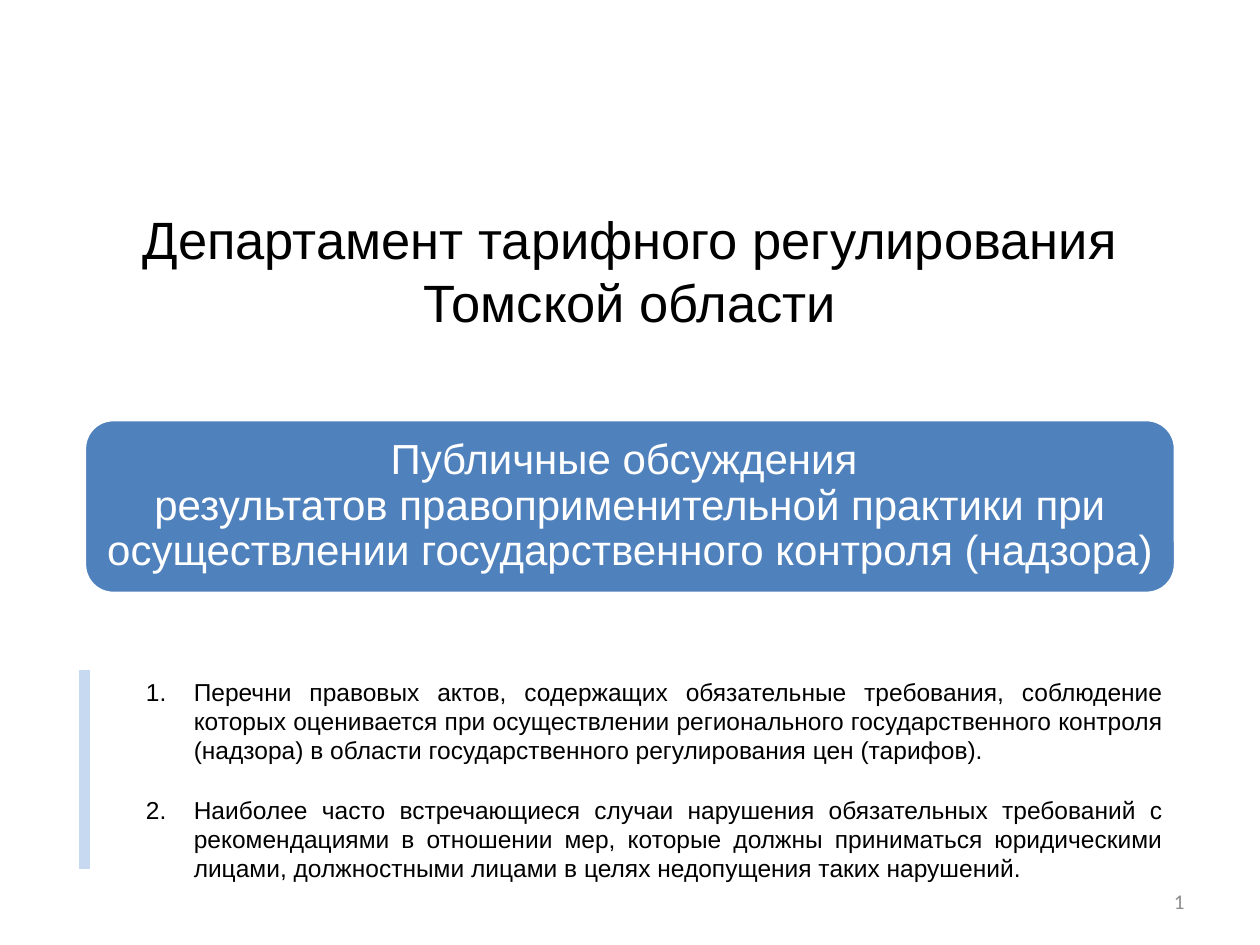
from dataclasses import dataclass

from lxml import etree
from pptx import Presentation
from pptx.dml.color import RGBColor
from pptx.enum.shapes import MSO_CONNECTOR, MSO_SHAPE
from pptx.enum.text import MSO_ANCHOR, PP_ALIGN
from pptx.oxml.ns import qn
from pptx.slide import Slide
from pptx.text.text import TextFrame, _Paragraph
from pptx.util import Inches, Pt

LEFT, CENTER, RIGHT, JUSTIFY = PP_ALIGN.LEFT, PP_ALIGN.CENTER, PP_ALIGN.RIGHT, PP_ALIGN.JUSTIFY
TOP, MIDDLE = MSO_ANCHOR.TOP, MSO_ANCHOR.MIDDLE


@dataclass(frozen=True)
class TextStyle:
    size: float
    color: RGBColor
    align: PP_ALIGN
    font: str = "Arial"


@dataclass(frozen=True)
class Theme:
    banner_fill = RGBColor(0x4F, 0x81, 0xBD)
    accent = RGBColor(0xC6, 0xD9, 0xF1)
    white = RGBColor(0xFF, 0xFF, 0xFF)
    black = RGBColor(0, 0, 0)
    title = TextStyle(30, black, CENTER)
    banner = TextStyle(24, white, CENTER)
    topic = TextStyle(14, black, JUSTIFY)
    page_number = TextStyle(12, RGBColor(0x8C, 0x8C, 0x8C), RIGHT, "Calibri")


@dataclass(frozen=True)
class Box:
    left: float
    top: float
    width: float
    height: float

    def emu(self) -> tuple:
        return tuple(Inches(v) for v in (self.left, self.top, self.width, self.height))


THEME = Theme()
TITLE = "Департамент тарифного регулирования Томской области"
BANNER_LINES = (
    "Публичные обсуждения ",
    "результатов правоприменительной практики при "
    "осуществлении государственного контроля (надзора)",
)
TOPICS = (
    "Перечни правовых актов, содержащих обязательные требования, соблюдение которых "
    "оценивается при осуществлении регионального государственного контроля (надзора) "
    "в области государственного регулирования цен (тарифов).",
    "Наиболее часто встречающиеся случаи нарушения обязательных требований с "
    "рекомендациями в отношении мер, которые должны приниматься юридическими лицами, "
    "должностными лицами в целях недопущения таких нарушений.",
)
TOPIC_INDENT = 0.38
TOPIC_GAP = 17


def add_styled_run(paragraph: _Paragraph, text: str, style: TextStyle) -> None:
    paragraph.alignment = style.align
    run = paragraph.add_run()
    run.text = text
    run.font.size = Pt(style.size)
    run.font.name = style.font
    run.font.color.rgb = style.color


def add_text_frame(slide: Slide, box: Box, anchor: MSO_ANCHOR) -> TextFrame:
    frame = slide.shapes.add_textbox(*box.emu()).text_frame
    frame.word_wrap = True
    frame.vertical_anchor = anchor
    return frame


def add_label(slide: Slide, box: Box, text: str, style: TextStyle) -> None:
    frame = add_text_frame(slide, box, MIDDLE)
    add_styled_run(frame.paragraphs[0], text, style)


def add_banner(slide: Slide, box: Box) -> None:
    banner = slide.shapes.add_shape(MSO_SHAPE.ROUNDED_RECTANGLE, *box.emu())
    banner.shadow.inherit = False
    banner.fill.solid()
    banner.fill.fore_color.rgb = THEME.banner_fill
    banner.line.color.rgb = THEME.white
    banner.line.width = Pt(2)
    frame = banner.text_frame
    frame.word_wrap = True
    frame.vertical_anchor = MIDDLE
    frame.margin_left = frame.margin_right = Inches(0.09)
    paragraph = frame.paragraphs[0]
    paragraph.line_spacing = 0.9
    for index, line in enumerate(BANNER_LINES):
        if index:
            paragraph.add_line_break()
        add_styled_run(paragraph, line, THEME.banner)


def add_accent_line(slide: Slide, left: float, top: float, bottom: float) -> None:
    accent = slide.shapes.add_connector(
        MSO_CONNECTOR.STRAIGHT, Inches(left), Inches(top), Inches(left), Inches(bottom))
    accent.line.color.rgb = THEME.accent
    accent.line.width = Pt(6)
    etree.SubElement(accent._element.spPr, qn("a:effectLst"))


def number_paragraph(paragraph: _Paragraph) -> None:
    properties = paragraph._p.get_or_add_pPr()
    properties.set("marL", str(Inches(TOPIC_INDENT)))
    properties.set("indent", str(-Inches(TOPIC_INDENT)))
    etree.SubElement(properties, qn("a:buAutoNum"), type="arabicPeriod")


def add_topics(slide: Slide, box: Box) -> None:
    frame = add_text_frame(slide, box, TOP)
    for index, topic in enumerate(TOPICS):
        paragraph = frame.add_paragraph() if index else frame.paragraphs[0]
        if index:
            paragraph.space_before = Pt(TOPIC_GAP)
        number_paragraph(paragraph)
        add_styled_run(paragraph, topic, THEME.topic)


def main() -> None:
    presentation = Presentation()
    presentation.slide_width, presentation.slide_height = Inches(10), Inches(7.5)
    slide = presentation.slides.add_slide(presentation.slide_layouts[6])

    # Department and subject
    add_label(slide, Box(0.75, 1.47, 8.5, 1.34), TITLE, THEME.title)
    add_banner(slide, Box(0.67, 3.33, 8.66, 1.38))

    # Numbered topics beside the accent line
    add_accent_line(slide, 0.67, 5.32, 6.9)
    add_topics(slide, Box(1.06, 5.32, 8.27, 1.75))

    # Page number
    add_label(slide, Box(7.17, 6.95, 2.33, 0.4), "1", THEME.page_number)

    presentation.save("out.pptx")


if __name__ == "__main__":
    main()
